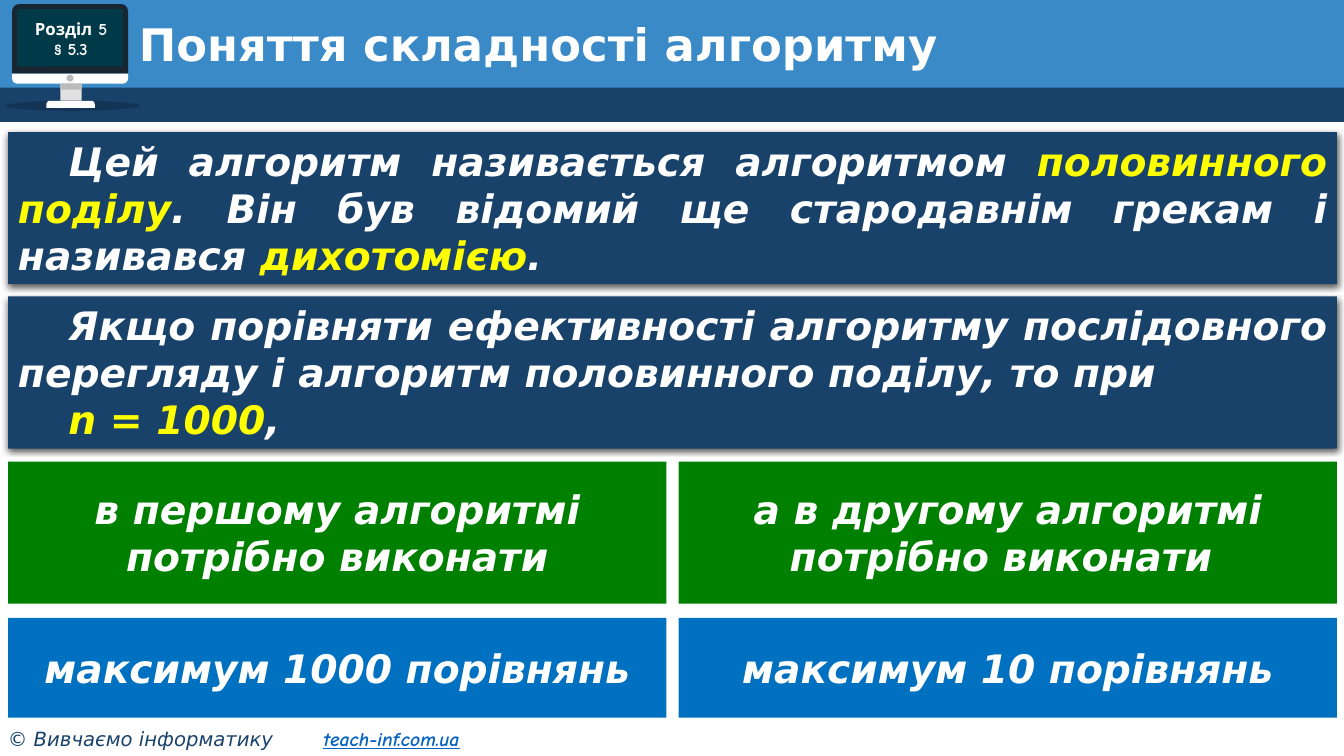
from lxml import etree
from pptx import Presentation
from pptx.dml.color import RGBColor
from pptx.enum import shapes, text
from pptx.oxml import ns
from pptx.util import Inches, Pt

SKY = RGBColor(0x39, 0x8A, 0xC7)
NAVY = RGBColor(0x19, 0x42, 0x6B)
GREEN = RGBColor(0x00, 0x80, 0x00)
BLUE = RGBColor(0x00, 0x70, 0xC0)
LINK = RGBColor(0x05, 0x63, 0xC1)
WHITE = RGBColor(0xFF, 0xFF, 0xFF)
YELLOW = RGBColor(0xFF, 0xFF, 0x00)
BLACK = RGBColor(0x00, 0x00, 0x00)
CASE = RGBColor(0x18, 0x26, 0x32)
SCREEN = RGBColor(0x00, 0x39, 0x48)
LIGHT_GRAY = RGBColor(0xE1, 0xE1, 0xE1)
GRAY = RGBColor(0xBB, 0xBB, 0xBB)

MAIN_FONT = "DejaVu Sans"
HAND_FONT = "Comic Neue"
RECTANGLE = shapes.MSO_SHAPE.RECTANGLE
OVAL = shapes.MSO_SHAPE.OVAL
ROUNDED = shapes.MSO_SHAPE.ROUNDED_RECTANGLE
ROUNDED_ENDS = shapes.MSO_SHAPE.ROUND_2_SAME_RECTANGLE
CENTER = text.PP_ALIGN.CENTER
JUSTIFY = text.PP_ALIGN.JUSTIFY
MIDDLE = text.MSO_ANCHOR.MIDDLE

MARGIN = 0.08
FULL_WIDTH = 13.18
GAP = 0.12
COLUMN_WIDTH = (FULL_WIDTH - GAP) / 2


def add_box(slide, kind, place, color, adjustments=()):
    shape = slide.shapes.add_shape(kind, *map(Inches, place))
    shape.shadow.inherit = False
    shape.fill.solid()
    shape.fill.fore_color.rgb = color
    shape.line.fill.background()
    for index, value in enumerate(adjustments):
        shape.adjustments[index] = value
    return shape


def add_text_box(slide, place, anchor):
    box = slide.shapes.add_textbox(*map(Inches, place))
    box.text_frame.word_wrap = True
    box.text_frame.vertical_anchor = anchor
    return box


def add_run(paragraph, words, size, color, font=MAIN_FONT, bold=True, italic=False):
    run = paragraph.add_run()
    run.text = words
    run.font.name = font
    run.font.size = Pt(size)
    run.font.color.rgb = color
    run.font.bold = bold
    run.font.italic = italic
    return run


def set_transparency(shape, opacity):
    color = shape.fill._xPr.find(".//" + ns.qn("a:srgbClr"))
    etree.SubElement(color, ns.qn("a:alpha"), val=str(opacity * 1000))


def add_drop_shadow(shape):
    effects = shape._element.spPr.find(ns.qn("a:effectLst"))
    shadow = etree.SubElement(
        effects, ns.qn("a:outerShdw"), blurRad=str(Pt(4.5)), dist=str(Pt(1.5)),
        dir="5400000", algn="t", rotWithShape="0")
    color = etree.SubElement(shadow, ns.qn("a:srgbClr"), val=str(BLACK))
    etree.SubElement(color, ns.qn("a:alpha"), val="63000")


def add_statement(slide, top, paragraphs):
    """Navy panel; each paragraph is a list of (words, color) runs."""
    panel = add_box(slide, RECTANGLE, (MARGIN, top, FULL_WIDTH, 1.51), NAVY)
    add_drop_shadow(panel)
    frame = panel.text_frame
    frame.word_wrap = True
    frame.vertical_anchor = text.MSO_ANCHOR.TOP
    for index, runs in enumerate(paragraphs):
        paragraph = frame.add_paragraph() if index else frame.paragraphs[0]
        paragraph.alignment = JUSTIFY
        paragraph._p.get_or_add_pPr().set("indent", str(Inches(0.5)))
        for words, color in runs:
            add_run(paragraph, words, 28, color, italic=True)


def add_comparison_row(slide, top, height, color, labels):
    for column, label in enumerate(labels):
        left = MARGIN + column * (COLUMN_WIDTH + GAP)
        cell = add_box(slide, RECTANGLE, (left, top, COLUMN_WIDTH, height), color)
        cell.text_frame.word_wrap = True
        cell.text_frame.vertical_anchor = MIDDLE
        paragraph = cell.text_frame.paragraphs[0]
        paragraph.alignment = CENTER
        add_run(paragraph, label, 28, WHITE, italic=True)


def add_monitor(slide):
    floor = add_box(slide, OVAL, (0.05, 1, 1.34, 0.1), BLACK)
    set_transparency(floor, 20)
    parts = [
        (ROUNDED_ENDS, (0.12, 0.04, 1.15, 0.69), CASE, (0.1, 0)),
        (ROUNDED_ENDS, (0.12, 0.73, 1.15, 0.1), WHITE, (0, 0.5)),
        (RECTANGLE, (0.6, 0.83, 0.21, 0.17), LIGHT_GRAY, ()),
        (RECTANGLE, (0.6, 0.83, 0.21, 0.06), GRAY, ()),
        (ROUNDED_ENDS, (0.46, 1, 0.48, 0.07), WHITE, (0.5, 0)),
        (OVAL, (0.66, 0.74, 0.07, 0.07), GRAY, ()),
        (ROUNDED, (0.17, 0.09, 1.05, 0.57), SCREEN, (0.036,)),
    ]
    for part in parts:
        add_box(slide, *part)


def add_section_label(slide):
    frame = add_text_box(slide, (0.13, 0.09, 1.15, 0.59), MIDDLE).text_frame
    for index, words in enumerate(("Розділ 5", "§ 5.3")):
        paragraph = frame.add_paragraph() if index else frame.paragraphs[0]
        paragraph.alignment = CENTER
        add_run(paragraph, words, 12, WHITE, HAND_FONT)


def add_title(slide, words):
    box = add_text_box(slide, (1.28, 0.18, 11.72, 0.58), MIDDLE)
    paragraph = box.text_frame.paragraphs[0]
    paragraph.line_spacing = 0.9
    add_run(paragraph, words, 32, WHITE)


def add_footer(slide):
    box = add_text_box(slide, (-0.02, 7.16, 5.23, 0.34), text.MSO_ANCHOR.TOP)
    paragraph = box.text_frame.paragraphs[0]
    tabs = etree.SubElement(paragraph._p.get_or_add_pPr(), ns.qn("a:tabLst"))
    etree.SubElement(tabs, ns.qn("a:tab"), pos=str(Inches(3.13)), algn="l")
    add_run(paragraph, "© Вивчаємо інформатику\t", 14, NAVY, bold=False, italic=True)
    site = add_run(paragraph, "teach-inf.com.ua", 14, LINK, HAND_FONT, italic=True)
    site.font.underline = True


def main():
    presentation = Presentation()
    presentation.slide_width = Inches(13.33)
    presentation.slide_height = Inches(7.5)
    slide = presentation.slides.add_slide(presentation.slide_layouts[6])

    add_box(slide, RECTANGLE, (0, 0, 13.33, 0.91), SKY)
    add_box(slide, RECTANGLE, (0, 0.87, 13.33, 0.34), NAVY)
    add_monitor(slide)
    add_footer(slide)
    add_section_label(slide)
    add_title(slide, "Поняття складності алгоритму")

    add_statement(slide, 1.31, [[
        ("Цей алгоритм називається алгоритмом ", WHITE),
        ("половинного поділу", YELLOW),
        (". Він був відомий ще стародавнім грекам і називався ", WHITE),
        ("дихотомією", YELLOW),
        (".", WHITE),
    ]])
    add_statement(slide, 2.94, [
        [("Якщо порівняти ефективності алгоритму послідовного перегляду "
          "і алгоритм половинного поділу, то при", WHITE)],
        [("n = 1000", YELLOW), (",", WHITE)],
    ])
    add_comparison_row(slide, 4.58, 1.41, GREEN, (
        "в першому алгоритмі потрібно виконати",
        "а в другому алгоритмі потрібно виконати "))
    add_comparison_row(slide, 6.13, 0.99, BLUE, (
        "максимум 1000 порівнянь", "максимум 10 порівнянь"))

    presentation.save("out.pptx")


if __name__ == "__main__":
    main()
